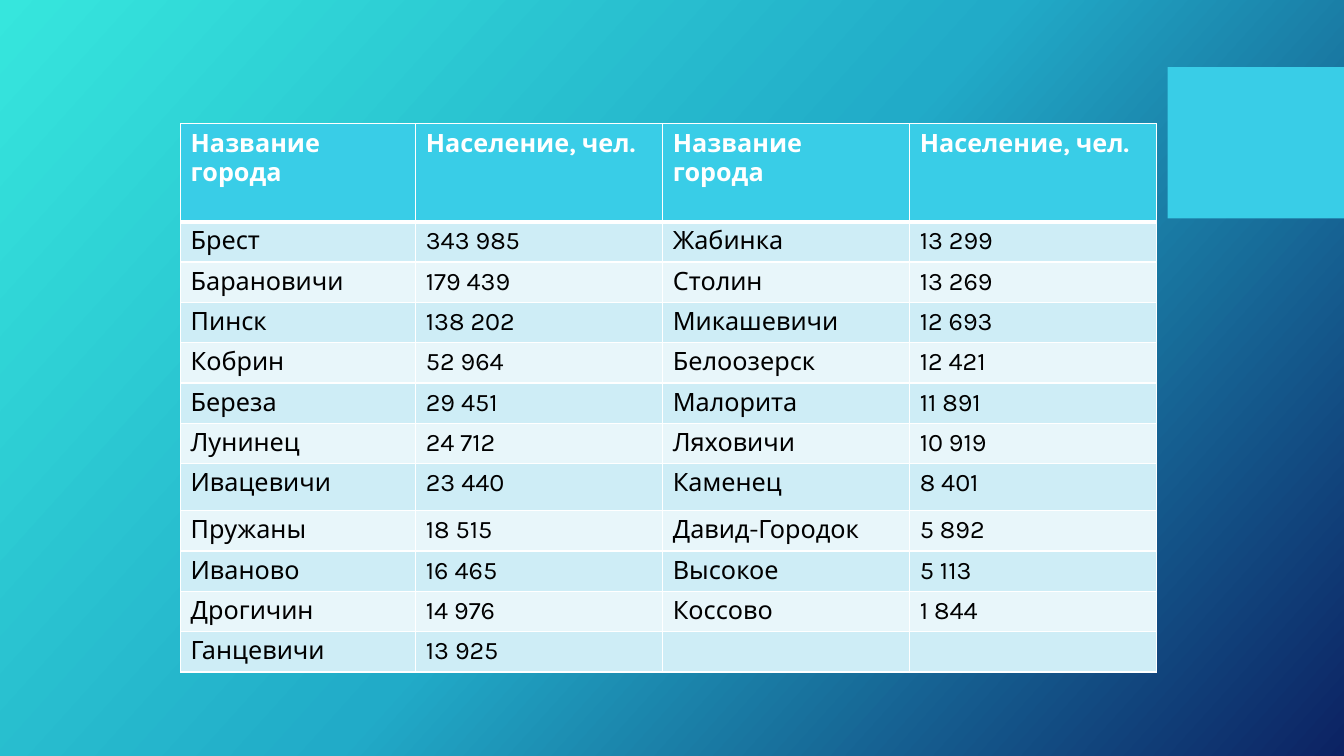
from copy import deepcopy

from pptx import Presentation
from pptx.dml.color import RGBColor
from pptx.enum.shapes import MSO_SHAPE as Shape
from pptx.oxml import parse_xml
from pptx.oxml.ns import nsdecls, qn
from pptx.util import Inches, Pt

HEADERS = ["Название города", "Население, чел."]
LEFT_CITIES = [
    ("Брест", "343 985"),
    ("Барановичи", "179 439"),
    ("Пинск", "138 202"),
    ("Кобрин", "52 964"),
    ("Береза", "29 451"),
    ("Лунинец", "24 712"),
    ("Ивацевичи", "23 440"),
    ("Пружаны", "18 515"),
    ("Иваново", "16 465"),
    ("Дрогичин", "14 976"),
    ("Ганцевичи", "13 925"),
]
RIGHT_CITIES = [
    ("Жабинка", "13 299"),
    ("Столин", "13 269"),
    ("Микашевичи", "12 693"),
    ("Белоозерск", "12 421"),
    ("Малорита", "11 891"),
    ("Ляховичи", "10 919"),
    ("Каменец", "8 401"),
    ("Давид-Городок", "5 892"),
    ("Высокое", "5 113"),
    ("Коссово", "1 844"),
    ("", ""),
]


def color(value):
    return RGBColor.from_string(value)


class CitySlide:
    font_name = "Karla"
    font_size = Pt(18)
    accent = "39CDE7"
    white = "FFFFFF"
    black = "000000"
    bands = ["CEEDF6", "E8F6FA"]
    columns, rows = 160, 90

    def __init__(self, presentation):
        self.unit_x = presentation.slide_width / self.columns
        self.unit_y = presentation.slide_height / self.rows
        self.slide = presentation.slides.add_slide(presentation.slide_layouts[6])

    def across(self, columns):
        return round(columns * self.unit_x)

    def down(self, rows):
        return round(rows * self.unit_y)

    def box(self, left, top, width, height):
        return self.across(left), self.down(top), self.across(width), self.down(height)

    def background(self, colors, angle):
        fill = self.slide.background.fill
        fill.gradient()
        fill.gradient_angle = 360 - angle
        stop_list = self.slide.element.find(".//" + qn("a:gsLst"))
        while len(stop_list) < len(colors):
            stop_list.append(deepcopy(stop_list[-1]))
        for index, (stop, value) in enumerate(zip(fill.gradient_stops, colors)):
            stop.position = index / (len(colors) - 1)
            stop.color.rgb = color(value)

    def rectangle(self, *area):
        shape = self.slide.shapes.add_shape(Shape.RECTANGLE, *self.box(*area))
        shape.shadow.inherit = False
        shape.fill.solid()
        shape.fill.fore_color.rgb = color(self.accent)
        shape.line.fill.background()

    def borders(self, cell, bottom):
        properties = cell._tc.get_or_add_tcPr()
        widths = {"lnL": 1, "lnR": 1, "lnT": 1, "lnB": bottom}
        for index, (side, width) in enumerate(widths.items()):
            properties.insert(index, parse_xml(
                f'<a:{side} {nsdecls("a")} w="{Pt(width)}"><a:solidFill>'
                f'<a:srgbClr val="{self.white}"/></a:solidFill></a:{side}>'))

    def cell(self, cell, text, fill, font_color, bold, bottom):
        cell.text = text
        cell.fill.solid()
        cell.fill.fore_color.rgb = color(fill)
        self.borders(cell, bottom)
        font = cell.text_frame.paragraphs[0].font
        font.name, font.size, font.bold = self.font_name, self.font_size, bold
        font.color.rgb = color(font_color)

    def table(self, left, top, widths, heights, records):
        area = self.box(left, top, sum(widths), sum(heights))
        table = self.slide.shapes.add_table(len(heights), len(widths), *area).table
        table.horz_banding = False
        for column, width in zip(table.columns, widths):
            column.width = self.across(width)
        for row, height in zip(table.rows, heights):
            row.height = self.down(height)
        for index, record in enumerate(records):
            header = index == 0
            fill = self.accent if header else self.bands[(index - 1) % 2]
            font_color = self.white if header else self.black
            for cell, text in zip(table.rows[index].cells, record):
                self.cell(cell, text, fill, font_color, header, 3 if header else 1)


def main():
    presentation = Presentation()
    presentation.slide_width = Inches(13.33)
    presentation.slide_height = Inches(7.5)
    city_slide = CitySlide(presentation)
    city_slide.background(["36E6DD", "21ABC8", "0C2263"], 42)
    city_slide.rectangle(139, 8, 21, 18)
    records = [HEADERS * 2]
    records += [left + right for left, right in zip(LEFT_CITIES, RIGHT_CITIES)]
    heights = [11.65] + [4.8] * 6 + [5.6] + [4.8] * 4
    heights[7] = 5.6
    city_slide.table(21.5, 14.75, [28] + [29.4] * 3, heights, records)
    presentation.save("out.pptx")


if __name__ == "__main__":
    main()
